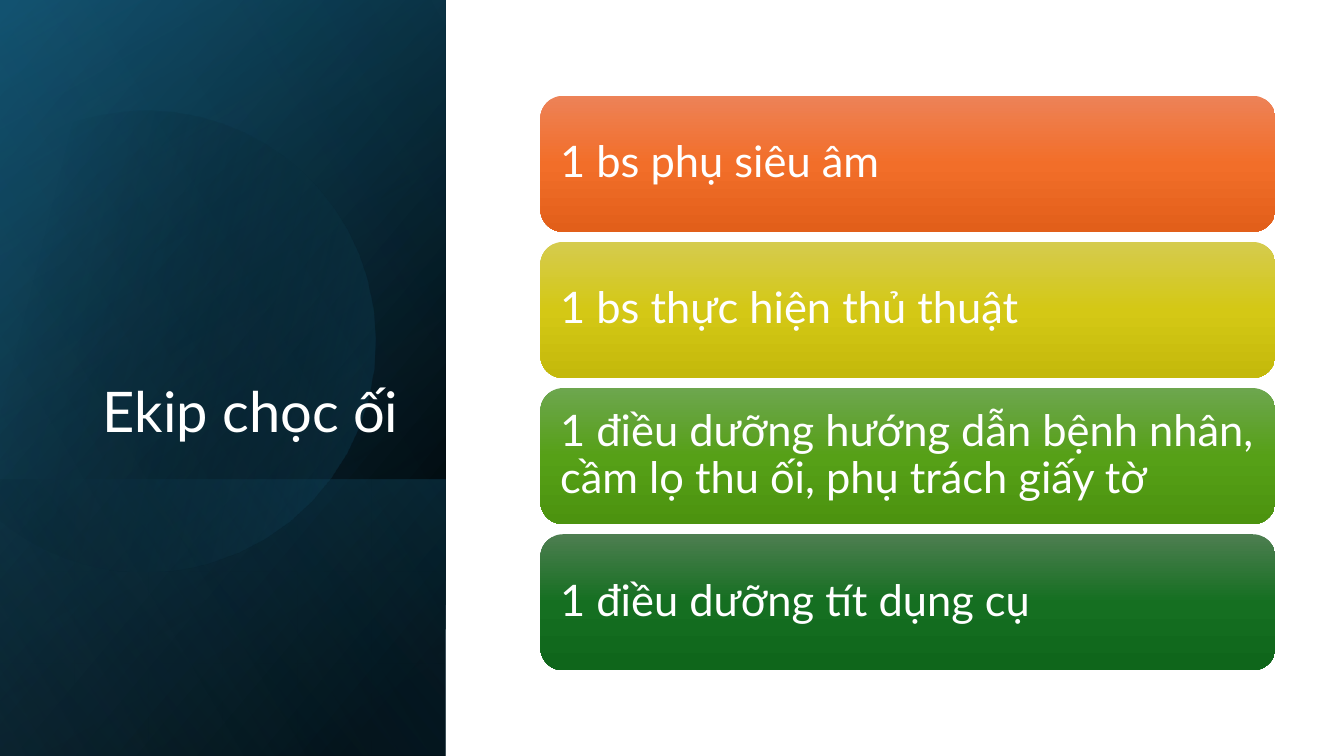
from math import cos, radians, sin

from lxml.etree import SubElement
from pptx import Presentation
from pptx.dml.color import RGBColor as RGB
from pptx.enum.shapes import MSO_SHAPE as SHAPE
from pptx.enum.text import MSO_ANCHOR as ANCHOR, MSO_AUTO_SIZE as AUTO_SIZE, PP_ALIGN as ALIGN
from pptx.oxml.ns import qn
from pptx.util import Inches, Pt

WHITE = RGB(0xFF, 0xFF, 0xFF)
BLACK = RGB(0x00, 0x00, 0x00)
NAVY = RGB(0x10, 0x48, 0x62)
TEAL = RGB(0x15, 0x60, 0x82)
SKY = RGB(0x46, 0xB1, 0xE1)
ORANGE = RGB(0xED, 0x82, 0x57), RGB(0xF2, 0x6E, 0x29), RGB(0xE2, 0x5F, 0x1A)
YELLOW = RGB(0xD5, 0xCB, 0x4E), RGB(0xD4, 0xC8, 0x15), RGB(0xC4, 0xB9, 0x0B)
LIME = RGB(0x6D, 0xA6, 0x4E), RGB(0x56, 0xA0, 0x17), RGB(0x4C, 0x93, 0x0F)
GREEN = RGB(0x4D, 0x7E, 0x50), RGB(0x15, 0x6F, 0x21), RGB(0x0F, 0x66, 0x1B)

PANEL = (-1.54, 1.54, 7.5, 4.42)
PANEL_FOOT = (0.84, 3.92, 2.74, 4.42)
PANEL_LAYERS = [
    (PANEL, [(8, BLACK, 100), (100, NAVY, 100)], 50),
    (PANEL, [(0, BLACK, 0), (99, TEAL, 46)], 30),
    (PANEL_FOOT, [(2, TEAL, 29), (100, BLACK, 30)], 130),
]
PANEL_SHEEN = (PANEL, [(0, BLACK, 0), (99, SKY, 11)], 120)

DISC_STOPS = [(29, BLACK, 0), (100, TEAL, 43)]
DISC_CENTER = (1.59, 3.35)
DISC_TURN = 343.9
DISC_RIGHT = [
    [(1.49, 1.1), (2.46, 1.12), (3.35, 1.77), (3.63, 2.75)],
    [(3.63, 2.75), (3.98, 3.97), (3.28, 5.23), (2.07, 5.58)],
    [(2.07, 5.58), (1.31, 5.8), (0.53, 5.61), (-0.03, 5.14)],
]
DISC_LEFT = [
    [(0, 1.61), (0.23, 1.42), (0.5, 1.28), (0.8, 1.19)],
    [(0.8, 1.19), (1.03, 1.13), (1.26, 1.1), (1.49, 1.1)],
]
DISC_CUT = [(-0.15, 5.03), (-0.15, 1.75)]

CARD_TOP, CARD_PITCH = 0.95, 1.45
TEAM = [
    ("1 bs phụ siêu âm", ORANGE),
    ("1 bs thực hiện thủ thuật", YELLOW),
    ("1 điều dưỡng hướng dẫn bệnh nhân, cầm lọ thu ối, phụ trách giấy tờ", LIME),
    ("1 điều dưỡng tít dụng cụ", GREEN),
]


def write_text(frame, text, font, size, color, align=ALIGN.LEFT, anchor=ANCHOR.MIDDLE, inset=0.1):
    """Put one formatted paragraph into a text frame."""
    frame.word_wrap = True
    frame.auto_size = AUTO_SIZE.NONE
    frame.vertical_anchor = anchor
    frame.margin_left = frame.margin_right = Inches(inset)
    frame.margin_top = frame.margin_bottom = Inches(0.05)
    paragraph = frame.paragraphs[0]
    paragraph.alignment = align
    paragraph.line_spacing = 0.9
    paragraph.space_before = Pt(0)
    run = paragraph.add_run()
    run.text = text
    run.font.name, run.font.size, run.font.color.rgb = font, Pt(size), color


def curve_points(curve, steps=12):
    """Sample a cubic Bézier curve, both ends included."""
    a, b, c, d = curve
    times = [step / steps for step in range(steps + 1)]
    return [
        tuple(
            (1 - t) ** 3 * a[i] + 3 * (1 - t) ** 2 * t * b[i] + 3 * (1 - t) * t**2 * c[i] + t**3 * d[i]
            for i in (0, 1)
        )
        for t in times
    ]


def turn_point(point, center, degrees):
    """Turn a point clockwise around a center."""
    angle = radians(degrees)
    dx, dy = point[0] - center[0], point[1] - center[1]
    return (
        Inches(center[0] + dx * cos(angle) - dy * sin(angle)),
        Inches(center[1] + dx * sin(angle) + dy * cos(angle)),
    )


class TeamSlide:
    """Holds the text style and the slide being built."""

    font = "Lato"
    color = WHITE

    def __init__(self, slide):
        """Keep the slide to draw on."""
        self.slide = slide

    def paint(self, shape, stops, angle):
        """Fill a shape with a linear gradient and no outline."""
        shape.shadow.inherit = False
        shape.line.fill.background()
        shape.fill.gradient()
        shape.fill.gradient_angle = 360 - angle
        stop_list = shape.element.spPr.find(qn("a:gradFill")).find(qn("a:gsLst"))
        stop_list.clear()
        for position, color, opacity in stops:
            stop = SubElement(stop_list, qn("a:gs"), pos=str(position * 1000))
            tone = SubElement(stop, qn("a:srgbClr"), val=str(color))
            if opacity < 100:
                SubElement(tone, qn("a:alpha"), val=str(opacity * 1000))

    def panel_layer(self, box, stops, angle):
        """Add one turned and mirrored layer of the left panel."""
        layer = self.slide.shapes.add_shape(SHAPE.RECTANGLE, *map(Inches, box))
        layer.rotation = 90
        layer.element.spPr.find(qn("a:xfrm")).set("flipH", "1")
        self.paint(layer, stops, angle)

    def disc(self):
        """Add the large disc cut off at the left edge."""
        right = [point for curve in DISC_RIGHT for point in curve_points(curve)]
        left = [point for curve in DISC_LEFT for point in curve_points(curve)]
        outline = [turn_point(p, DISC_CENTER, 360 - DISC_TURN) for p in right + DISC_CUT + left]
        builder = self.slide.shapes.build_freeform(*outline[0])
        builder.add_line_segments(outline[1:], close=True)
        disc = builder.convert_to_shape()
        disc.rotation = DISC_TURN
        self.paint(disc, DISC_STOPS, 30)

    def title(self, text):
        """Place the title on top of the panel."""
        title = self.slide.shapes.title
        title.left, title.top, title.width, title.height = map(Inches, (0.64, 1.84, 3.41, 2.62))
        write_text(title.text_frame, text, self.font, 40, self.color, align=ALIGN.RIGHT, anchor=ANCHOR.BOTTOM)
        title.element.getparent().append(title.element)

    def card(self, top, text, tones):
        """Add one rounded card with its text."""
        card = self.slide.shapes.add_shape(
            SHAPE.ROUNDED_RECTANGLE, Inches(5.36), Inches(top), Inches(7.29), Inches(1.35)
        )
        self.paint(card, [(50 * i, tone, 100) for i, tone in enumerate(tones)], 90)
        write_text(card.text_frame, text, self.font, 31, self.color, inset=0.13)


def main():
    """Build the slide and save it."""
    deck = Presentation()
    deck.slide_width, deck.slide_height = Inches(13.33), Inches(7.5)
    page = TeamSlide(deck.slides.add_slide(deck.slide_layouts[5]))
    for layer in PANEL_LAYERS:
        page.panel_layer(*layer)
    page.disc()
    page.panel_layer(*PANEL_SHEEN)
    page.title("Ekip chọc ối")
    for row, (duty, tones) in enumerate(TEAM):
        page.card(CARD_TOP + row * CARD_PITCH, duty, tones)
    deck.save("out.pptx")


if __name__ == "__main__":
    main()
